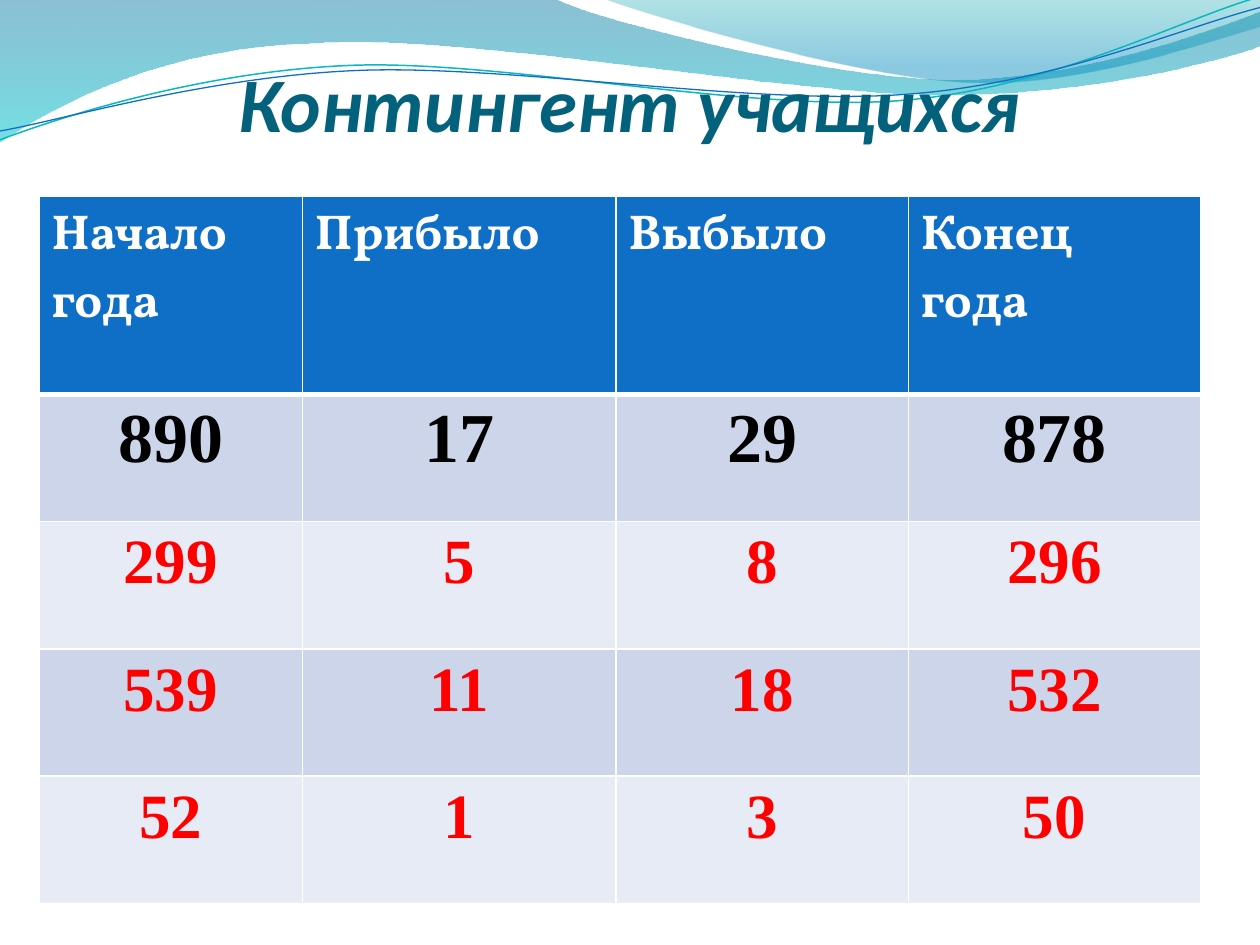
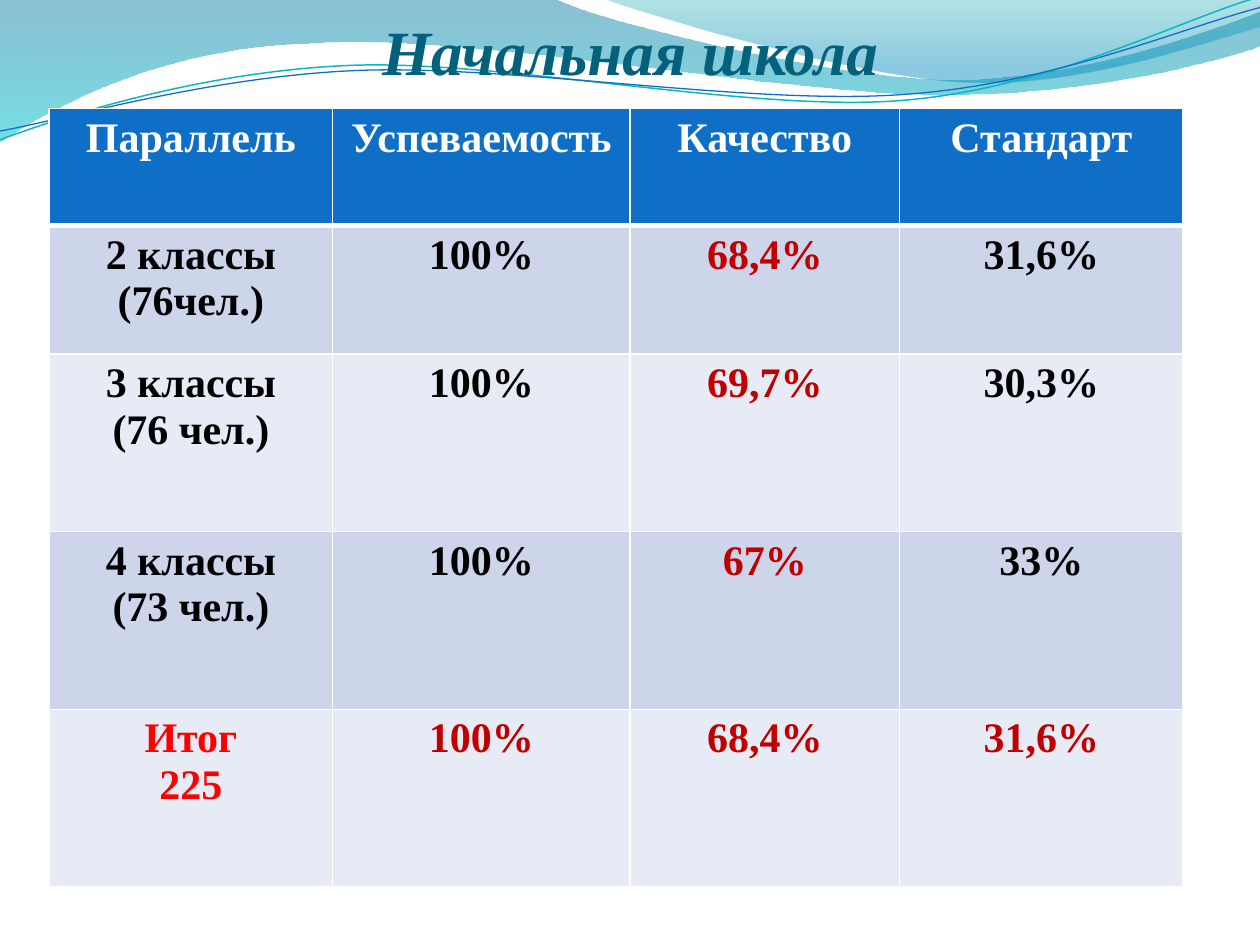
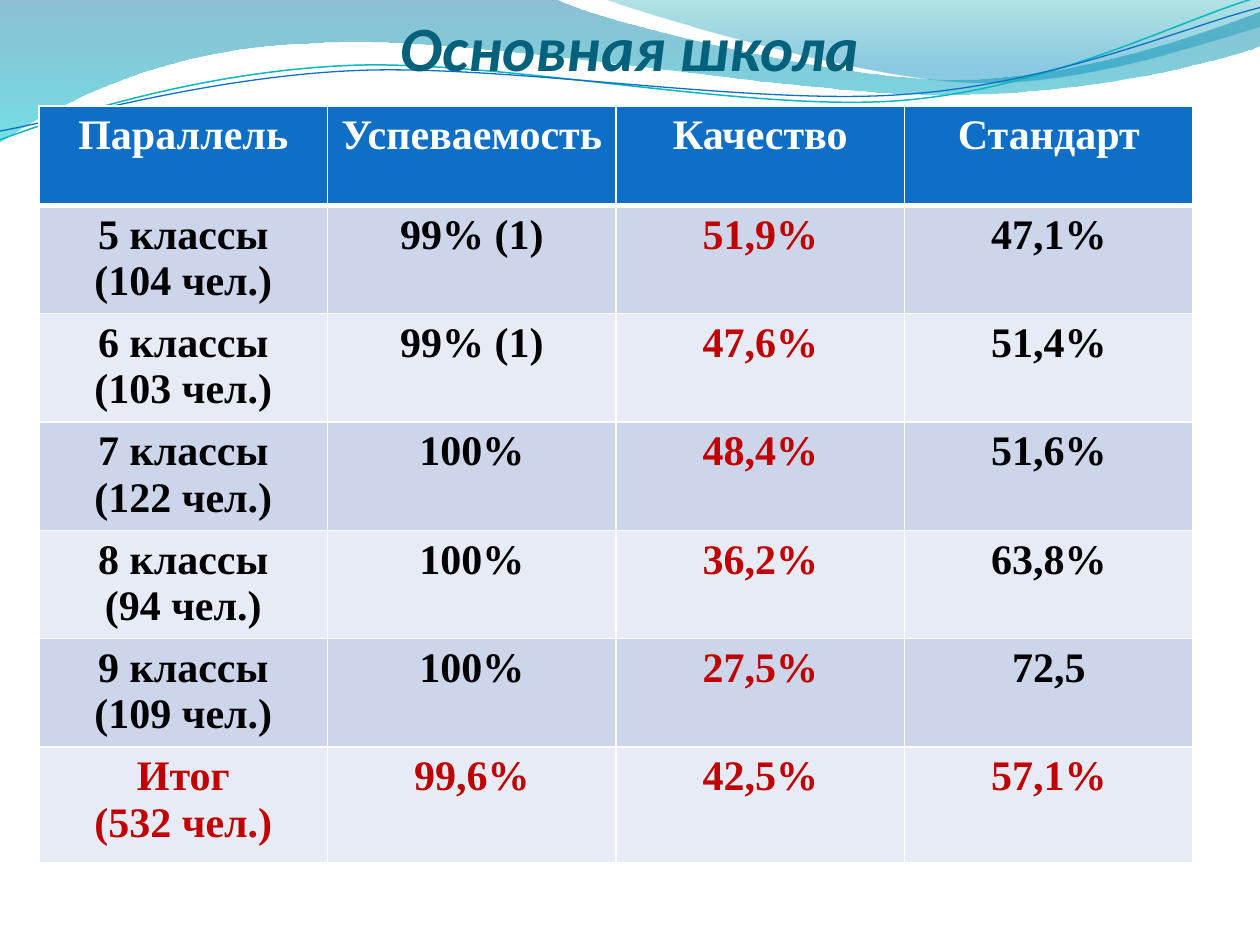
from dataclasses import dataclass

from lxml.etree import SubElement
from pptx import Presentation
from pptx.dml.color import RGBColor
from pptx.enum.text import MSO_ANCHOR as Anchor, MSO_AUTO_SIZE as AutoSize, PP_ALIGN as Align
from pptx.oxml.ns import qn
from pptx.util import Pt

PX = 9144  # EMU per px, 100 px to the inch


@dataclass(frozen=True)
class Theme:
    white: str = "FFFFFF"
    black: str = "000000"
    red: str = "FF0000"
    dark_red: str = "C00000"
    title: str = "04617B"
    header: str = "0F6FC6"
    bands: tuple = ("CCD5EA", "E7EBF5")
    aqua_line: str = "0AB8BF"
    left_wave: tuple = ((0, "0074A1", 45), (1, "00C6CF", 55))
    right_wave: tuple = ((0, "00A1A9", 30), (0.8, "008BBF", 45))
    sans: str = "Calibri"
    serif: str = "Times New Roman"
    display: str = "Vollkorn"
    big_title: int = 44
    small_title: int = 36
    thin: int = 1
    thick: int = 3


@dataclass(frozen=True)
class TextStyle:
    size: int
    color: str
    font: str
    align: Align = Align.CENTER


THEME = Theme()

# Outlines: a start point, then line ends (x, y) or curves (two handles and an end)
LEFT_WAVE = [
    (0, 0), (440, -1), (476, 17, 664, 63, 758, 63), (853, 63, 958, 26, 1000, 9),
    (1001, 36), (983, 44, 870, 76, 746, 75), (622, 75, 382, 28, 257, 34),
    (129, 36, 46, 83, -1, 113),
]
RIGHT_WAVE = [
    (479, -1), (509, 11, 682, 62, 769, 65), (856, 69, 961, 32, 1000, 21), (1000, 0),
]
AQUA_CURVE = [
    (0, 111), (48, 93, 158, 57, 277, 52), (395, 47, 593, 89, 713, 80),
    (833, 71, 938, 15, 998, -2),
]
BLUE_CURVE = [
    (0, 104), (47, 96, 164, 61, 283, 56), (403, 51, 597, 84, 717, 75),
    (836, 67, 941, 21, 1000, 6),
]

GRADE_HEADER = ["Параллель", "Успеваемость", "Качество", "Стандарт"]


# Background waves
def add_outline(page, steps, close):
    ends = [step[-2:] for step in steps]
    builder = page.shapes.build_freeform(*ends[0], scale=PX)
    builder.add_line_segments(ends[1:], close=close)
    shape = builder.convert_to_shape()
    shape.shadow.inherit = False
    left, top = (min(values) for values in zip(*ends))
    segments = list(shape.element.iter(qn("a:lnTo")))
    for segment, step in zip(segments, steps[1:]):
        if len(step) == 6:
            segment.tag = qn("a:cubicBezTo")
            for index in (0, 1):
                x, y = step[2 * index:2 * index + 2]
                handle = SubElement(segment, qn("a:pt"), x=str(x - left), y=str(y - top))
                segment.insert(index, handle)
    return shape


def add_wave(page, steps, stops):
    shape = add_outline(page, steps, True)
    shape.line.fill.background()
    shape.fill.gradient()
    shape.fill.gradient_angle = 270
    for stop, (position, color, _) in zip(shape.fill.gradient_stops, stops):
        stop.position = position
        stop.color.rgb = RGBColor.from_string(color)
    for tint, (_, _, opacity) in zip(shape.element.iter(qn("a:srgbClr")), stops):
        SubElement(tint, qn("a:alpha"), val=str(opacity * 1000))
    return shape


def add_curve(page, steps, color, width):
    shape = add_outline(page, steps, False)
    shape.fill.background()
    shape.line.color.rgb = RGBColor.from_string(color)
    shape.line.width = Pt(width)
    return shape


def decorate_layout(layout, page):
    """Draw the waves on a page, then move them to the layout all pages share."""
    waves = [
        add_wave(page, LEFT_WAVE, THEME.left_wave),
        add_wave(page, RIGHT_WAVE, THEME.right_wave),
        add_curve(page, AQUA_CURVE, THEME.aqua_line, 0.85),
        add_curve(page, BLUE_CURVE, THEME.header, 0.75),
    ]
    for index, wave in enumerate(waves, start=2):
        layout.shapes.element.insert(index, wave.element)


# Text
def add_span(para, text, style, italic=False):
    para.alignment = style.align
    span = para.add_run()
    span.text = text
    span.font.size = Pt(style.size)
    span.font.name = style.font
    span.font.bold = True
    span.font.italic = italic
    span.font.color.rgb = RGBColor.from_string(style.color)


def set_title(page, text, top, height, size, font):
    box = page.shapes.title
    box.left, box.top, box.width, box.height = 50 * PX, top * PX, 900 * PX, height * PX
    frame = box.text_frame
    frame.word_wrap = True
    frame.auto_size = AutoSize.NONE
    frame.vertical_anchor = Anchor.BOTTOM
    frame.margin_left = frame.margin_right = frame.margin_bottom = 0
    frame.margin_top = 5 * PX
    add_span(frame.paragraphs[0], text, TextStyle(size, THEME.title, font), italic=True)


# Tables
def set_borders(cell, row):
    properties = cell._tc.get_or_add_tcPr()
    top = THEME.thick if row == 1 else THEME.thin
    bottom = THEME.thick if row == 0 else THEME.thin
    for side, width in zip("LRTB", (THEME.thin, THEME.thin, top, bottom)):
        line = SubElement(properties, qn(f"a:ln{side}"), w=str(Pt(width)))
        fill = SubElement(line, qn("a:solidFill"))
        SubElement(fill, qn("a:srgbClr"), val=THEME.white)


def fill_cell(cell, row, text, style):
    set_borders(cell, row)
    color = THEME.header if row == 0 else THEME.bands[(row - 1) % 2]
    cell.fill.solid()
    cell.fill.fore_color.rgb = RGBColor.from_string(color)
    frame = cell.text_frame
    for index, line in enumerate(text.split("\n")):
        para = frame.add_paragraph() if index else frame.paragraphs[0]
        add_span(para, line, style)


def add_grid(page, left, top, widths, heights, rows, style_of):
    table = page.shapes.add_table(
        len(rows), len(widths), left * PX, top * PX, sum(widths) * PX, sum(heights) * PX
    ).table
    for column, width in zip(table.columns, widths):
        column.width = width * PX
    for line, height in zip(table.rows, heights):
        line.height = height * PX
    for row, texts in enumerate(rows):
        for column, text in enumerate(texts):
            fill_cell(table.cell(row, column), row, text, style_of(row, column))


def headcount_style(row, column):
    if row == 0:
        return TextStyle(28, THEME.white, THEME.display, Align.LEFT)
    if row == 1:
        return TextStyle(40, THEME.black, THEME.serif)
    return TextStyle(36, THEME.red, THEME.serif)


def grade_style(total_row, total_color):
    def style_of(row, column):
        if row == 0:
            color = THEME.white
        elif row == total_row and column == 0:
            color = total_color
        elif row == total_row or column == 2:
            color = THEME.dark_red
        else:
            color = THEME.black
        return TextStyle(24, color, THEME.serif)

    return style_of


# Slides
def fill_headcount(page):
    set_title(page, "Контингент учащихся", 39, 78, THEME.big_title, THEME.sans)
    rows = [
        ["Начало года", "Прибыло", "Выбыло", "Конец года"],
        ["890", "17", "29", "878"],
        ["299", "5", "8", "296"],
        ["539", "11", "18", "532"],
        ["52", "1", "3", "50"],
    ]
    add_grid(page, 31, 156, [209, 249, 232, 232], [157] + [101] * 4, rows, headcount_style)


def fill_primary_school(page):
    set_title(page, "Начальная школа", 0, 70, THEME.small_title, THEME.serif)
    rows = [
        GRADE_HEADER,
        ["2 классы\n(76чел.)", "100%", "68,4%", "31,6%"],
        ["3 классы\n(76 чел.)", "100%", "69,7%", "30,3%"],
        ["4 классы\n(73 чел.)", "100%", "67%", "33%"],
        ["Итог\n225", "100%", "68,4%", "31,6%"],
    ]
    add_grid(page, 39, 86, [225, 236, 214, 225], [93, 102] + [141] * 3, rows,
             grade_style(4, THEME.red))


def fill_middle_school(page):
    set_title(page, "Основная школа", 23, 44, THEME.small_title, THEME.sans)
    rows = [
        GRADE_HEADER,
        ["5 классы\n(104 чел.)", "99% (1)", "51,9%", "47,1%"],
        ["6 классы\n(103 чел.)", "99% (1)", "47,6%", "51,4%"],
        ["7 классы\n(122 чел.)", "100%", "48,4%", "51,6%"],
        ["8 классы\n(94 чел.)", "100%", "36,2%", "63,8%"],
        ["9 классы\n(109 чел.)", "100%", "27,5%", "72,5"],
        ["Итог\n(532 чел.)", "99,6%", "42,5%", "57,1%"],
    ]
    add_grid(page, 31, 84, [229] * 4, [79] + [86] * 5 + [92], rows,
             grade_style(6, THEME.dark_red))


def main():
    deck = Presentation()
    deck.slide_width, deck.slide_height = 1000 * PX, 750 * PX
    layout = deck.slide_layouts.get_by_name("Title Only")
    pages = [deck.slides.add_slide(layout) for _ in range(3)]
    decorate_layout(layout, pages[0])
    for page, fill_page in zip(pages, (fill_headcount, fill_primary_school, fill_middle_school)):
        fill_page(page)
    deck.save("out.pptx")


if __name__ == "__main__":
    main()
